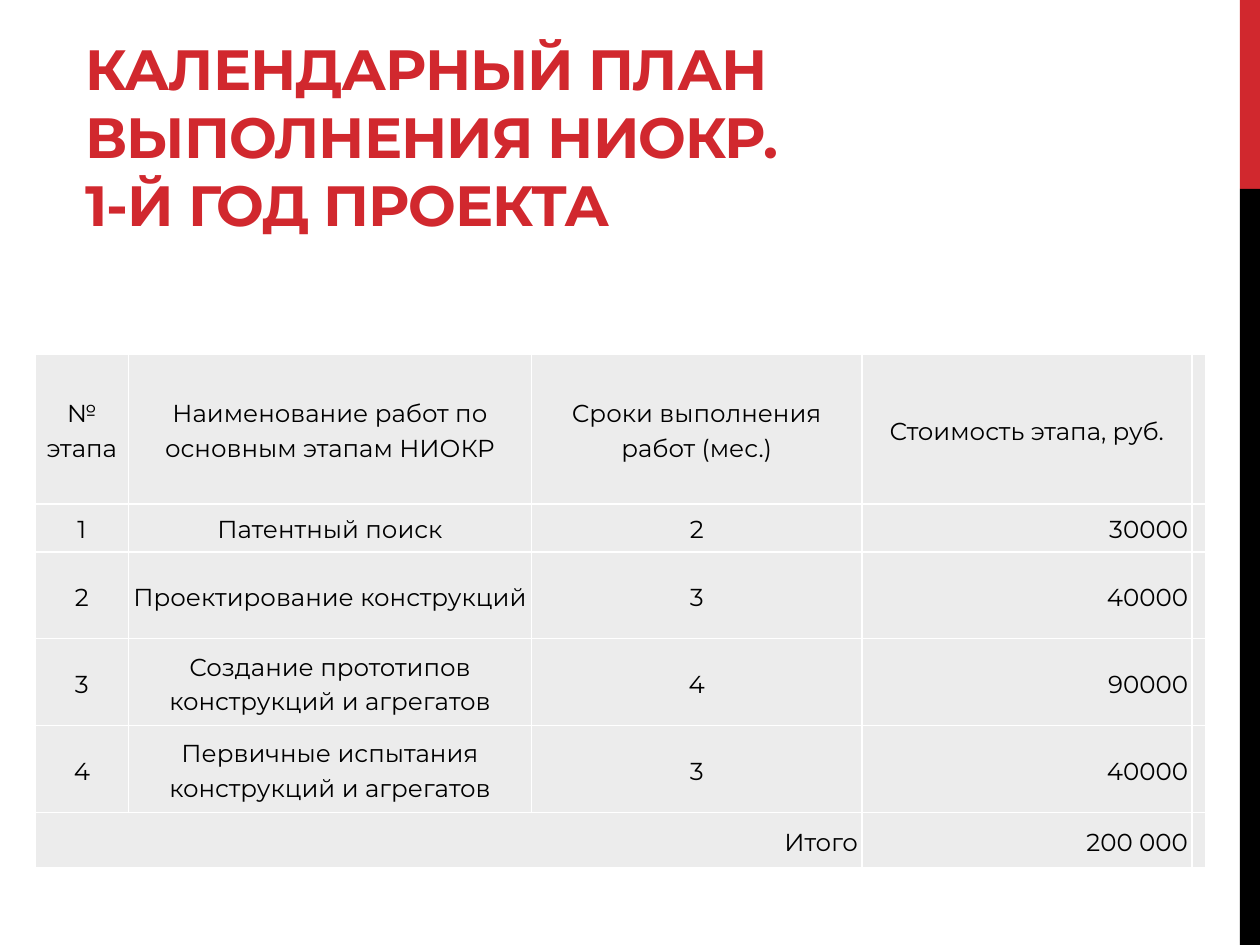
from dataclasses import dataclass

from lxml import etree
from pptx import Presentation
from pptx.dml.color import RGBColor
from pptx.enum.shapes import MSO_SHAPE
from pptx.enum.text import MSO_ANCHOR, MSO_AUTO_SIZE, PP_ALIGN
from pptx.oxml.ns import qn
from pptx.util import Inches, Pt

LEFT, CENTER, RIGHT = PP_ALIGN.LEFT, PP_ALIGN.CENTER, PP_ALIGN.RIGHT
MIDDLE, BOTTOM = MSO_ANCHOR.MIDDLE, MSO_ANCHOR.BOTTOM


@dataclass(frozen=True)
class Theme:
    font: str = "Montserrat"
    red: str = "D1282E"
    black: str = "000000"
    cell: str = "ECECEC"
    border: str = "FFFFFF"
    title_size: float = 32.4
    table_size: float = 14


THEME = Theme()

# Content
TITLE = "КАЛЕНДАРНЫЙ ПЛАН ВЫПОЛНЕНИЯ НИОКР. \v1-Й ГОД ПРОЕКТА"
HEADER = ("№ этапа", "Наименование работ по основным этапам НИОКР",
          "Сроки выполнения работ (мес.)", "Стоимость этапа, руб.")
STAGES = [
    ("1", "Патентный поиск", "2", "30000"),
    ("2", "Проектирование конструкций", "3", "40000"),
    ("3", "Создание прототипов конструкций и агрегатов", "4", "90000"),
    ("4", "Первичные испытания конструкций и агрегатов", "3", "40000"),
]
TOTAL = ("Итого", "", "", "200 000")

# Grid, in inches
SLIDE_WIDTH, SLIDE_HEIGHT = 10, 7.5
STRIPE_WIDTH, STRIPE_SPLIT = 0.16, 0.2
TITLE_BOX = (0.58, 0.44, 9.07, 1.5)
TABLE_LEFT, TABLE_TOP = 0.28, 2.81
COLUMN_WIDTHS = (0.74, 3.2, 2.62, 2.62, 0.11)
ROW_HEIGHTS = (1.19, 0.38, 0.69, 0.69, 0.69, 0.44)
CELL_MARGIN = 0.03
COST_COLUMN = 3


def style_font(font, size, color, bold=False):
    font.name, font.size, font.bold = THEME.font, Pt(size), bold
    font.color.rgb = RGBColor.from_string(color)


def add_stripe(page, top, height, color):
    stripe = page.shapes.add_shape(
        MSO_SHAPE.RECTANGLE, Inches(SLIDE_WIDTH - STRIPE_WIDTH), Inches(top),
        Inches(STRIPE_WIDTH), Inches(height))
    stripe.shadow.inherit = False
    stripe.fill.solid()
    stripe.fill.fore_color.rgb = RGBColor.from_string(color)
    stripe.line.fill.background()


def fill_title(title):
    title.left, title.top, title.width, title.height = map(Inches, TITLE_BOX)
    frame = title.text_frame
    frame.text = TITLE
    frame.word_wrap = True
    frame.auto_size = MSO_AUTO_SIZE.NONE
    frame.vertical_anchor = BOTTOM
    paragraph = frame.paragraphs[0]
    paragraph.alignment = LEFT
    for span in paragraph.runs:
        style_font(span.font, THEME.title_size, THEME.red, bold=True)
        span.font._element.set("spc", "-60")


def set_borders(cell):
    properties = cell._tc.get_or_add_tcPr()
    for index, side in enumerate(("lnL", "lnR", "lnT", "lnB")):
        line = etree.Element(qn(f"a:{side}"), w=str(Pt(1)))
        fill = etree.SubElement(line, qn("a:solidFill"))
        etree.SubElement(fill, qn("a:srgbClr"), val=THEME.border)
        properties.insert(index, line)


def fill_cell(cell, text, alignment):
    cell.fill.solid()
    cell.fill.fore_color.rgb = RGBColor.from_string(THEME.cell)
    set_borders(cell)
    cell.vertical_anchor = MIDDLE
    cell.margin_left = cell.margin_right = Inches(CELL_MARGIN)
    cell.margin_top = cell.margin_bottom = Inches(CELL_MARGIN)
    if text:
        cell.text_frame.text = text
        paragraph = cell.text_frame.paragraphs[0]
        paragraph.alignment = alignment
        paragraph.line_spacing = 1.15
        style_font(paragraph.runs[0].font, THEME.table_size, THEME.black)


def add_plan(page):
    rows = [HEADER, *STAGES, TOTAL]
    last_row = len(rows) - 1
    table = page.shapes.add_table(
        len(rows), len(COLUMN_WIDTHS), Inches(TABLE_LEFT), Inches(TABLE_TOP),
        Inches(sum(COLUMN_WIDTHS)), Inches(sum(ROW_HEIGHTS))).table
    table.first_row = table.horz_banding = False
    for column, width in zip(table.columns, COLUMN_WIDTHS):
        column.width = Inches(width)
    for row, height in zip(table.rows, ROW_HEIGHTS):
        row.height = Inches(height)

    # The narrow last column stays empty
    for r, texts in enumerate(rows):
        for c, text in enumerate((*texts, "")):
            is_sum = r == last_row or (r > 0 and c == COST_COLUMN)
            fill_cell(table.cell(r, c), text, RIGHT if is_sum else CENTER)
    table.cell(last_row, 0).merge(table.cell(last_row, COST_COLUMN - 1))


def main():
    deck = Presentation()
    deck.slide_width, deck.slide_height = Inches(SLIDE_WIDTH), Inches(SLIDE_HEIGHT)
    page = deck.slides.add_slide(deck.slide_layouts[5])

    # Side stripe: red above, black below
    split = SLIDE_HEIGHT * STRIPE_SPLIT
    add_stripe(page, 0, split, THEME.red)
    add_stripe(page, split, SLIDE_HEIGHT - split, THEME.black)

    fill_title(page.shapes.title)
    add_plan(page)
    deck.save("out.pptx")


if __name__ == "__main__":
    main()
